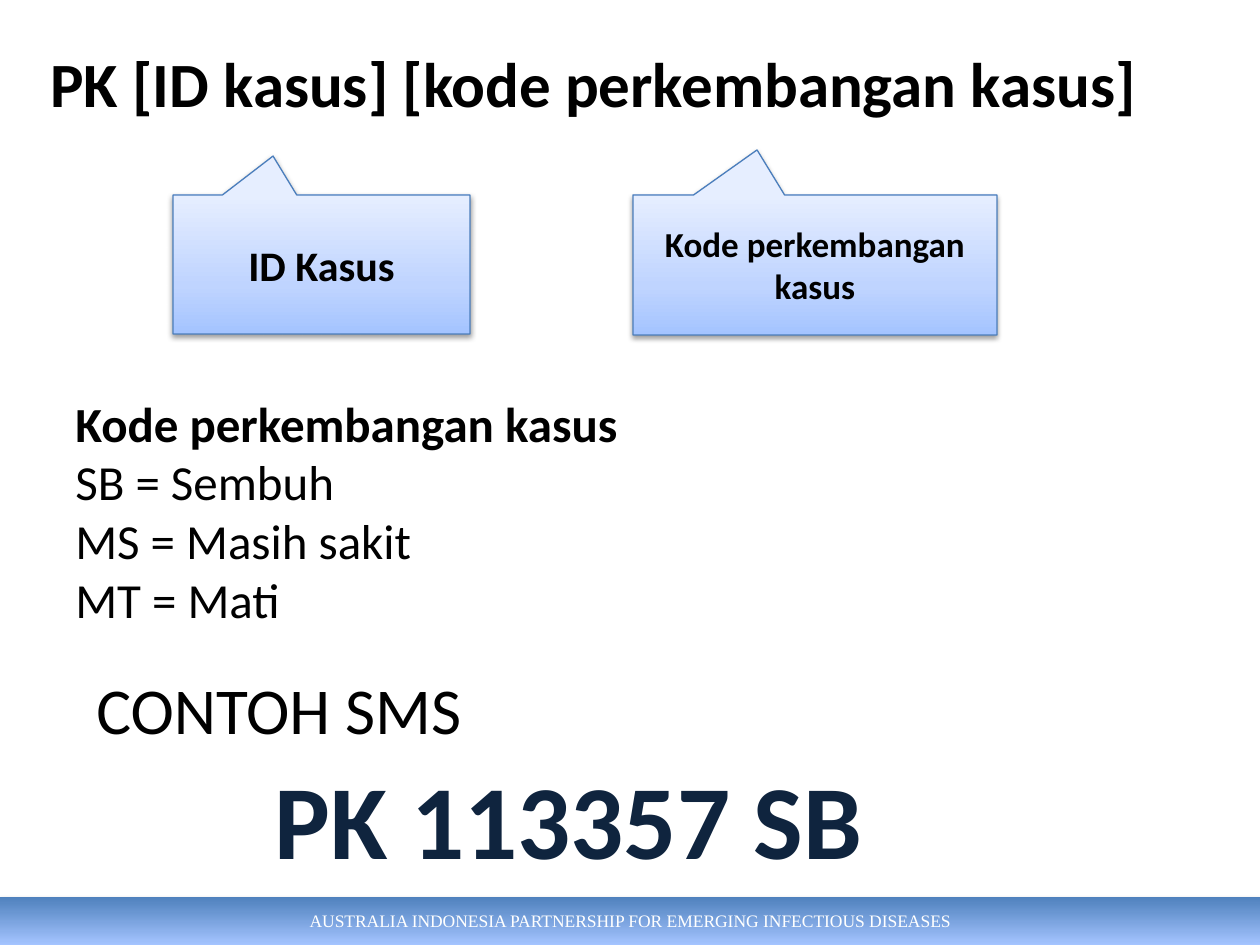
from dataclasses import dataclass

from lxml.etree import SubElement
from pptx import Presentation
from pptx.dml.color import RGBColor
from pptx.enum.shapes import MSO_SHAPE as Preset
from pptx.enum.text import MSO_ANCHOR as Anchor, PP_ALIGN as Align
from pptx.oxml.ns import qn
from pptx.util import Emu, Pt

PX = 914400 / 126
BLACK = RGBColor(0x00, 0x00, 0x00)
WHITE = RGBColor(0xFF, 0xFF, 0xFF)
NAVY = RGBColor(0x0F, 0x24, 0x3E)
BLUE = RGBColor(0x4F, 0x81, 0xBD)
OUTLINE = RGBColor(0x4B, 0x7E, 0xBC)
SKY = RGBColor(0xA4, 0xC4, 0xFF)
PALE = RGBColor(0xBF, 0xD4, 0xFF)
MIST = RGBColor(0xE6, 0xEE, 0xFF)


@dataclass(frozen=True)
class Box:
    left: int
    top: int
    width: int
    height: int

    def emu(self) -> list[Emu]:
        return [Emu(round(v * PX)) for v in (self.left, self.top, self.width, self.height)]


@dataclass(frozen=True)
class Line:
    text: str
    size: float
    bold: bool = False
    color: RGBColor = BLACK
    font: str = "Calibri"
    align: Align = Align.LEFT


@dataclass(frozen=True)
class TextBlock:
    box: Box
    lines: tuple[Line, ...]
    anchor: Anchor = Anchor.TOP


@dataclass(frozen=True)
class Callout:
    box: Box
    tip: tuple[float, float]
    line: Line


@dataclass(frozen=True)
class Gradient:
    stops: tuple[tuple[int, RGBColor], ...]
    angle: int


@dataclass(frozen=True)
class Shadow:
    opacity: int
    blur: float
    distance: float


FOOTER_GRADIENT = Gradient(((0, BLUE), (100, SKY)), 90)
CALLOUT_GRADIENT = Gradient(((0, SKY), (35, PALE), (100, MIST)), 270)
FOOTER_SHADOW = Shadow(35, 3.1, 1.8)
CALLOUT_SHADOW = Shadow(38, 3.1, 1.6)

FOOTER_BOX = Box(0, 897, 1260, 48)
FOOTER_LINE = Line("AUSTRALIA INDONESIA PARTNERSHIP FOR EMERGING INFECTIOUS DISEASES",
                   10, color=WHITE, font="Times New Roman", align=Align.CENTER)

CALLOUTS = (
    Callout(Box(173, 195, 297, 139), (-0.163, -0.78),
            Line("ID Kasus", 24, True, align=Align.CENTER)),
    Callout(Box(633, 195, 364, 140), (-0.159, -0.822),
            Line("Kode perkembangan kasus", 20, True, align=Align.CENTER)),
)

TEXT_BLOCKS = (
    TextBlock(Box(38, 38, 1191, 600),
              (Line("PK [ID kasus] [kode perkembangan kasus]", 36, True),)),
    TextBlock(Box(63, 387, 655, 289),
              (Line("Kode perkembangan kasus", 28, True),
               Line("SB = Sembuh", 28),
               Line("MS = Masih sakit", 28),
               Line("MT = Mati", 28))),
    TextBlock(Box(213, 748, 735, 110),
              (Line("PK 113357 SB ", 60, True, NAVY, align=Align.CENTER),)),
    TextBlock(Box(63, 669, 432, 78),
              (Line("CONTOH SMS", 37.4, align=Align.CENTER),), Anchor.MIDDLE),
)


def write_lines(shape, lines: tuple[Line, ...], anchor: Anchor) -> None:
    frame = shape.text_frame
    frame.word_wrap = True
    frame.vertical_anchor = anchor
    for index, line in enumerate(lines):
        paragraph = frame.add_paragraph() if index else frame.paragraphs[0]
        paragraph.alignment = line.align
        run = paragraph.add_run()
        run.text = line.text
        run.font.color.rgb = line.color
        formats = {"name": line.font, "size": Pt(line.size), "bold": line.bold}
        for name, value in formats.items():
            setattr(run.font, name, value)


def add_color(parent, color: RGBColor):
    return SubElement(parent, qn("a:srgbClr"), val=str(color))


def fill_gradient(shape, gradient: Gradient) -> None:
    shape.fill.gradient()
    element = shape._element.spPr.find(qn("a:gradFill"))
    for child in list(element):
        element.remove(child)
    stop_list = SubElement(element, qn("a:gsLst"))
    for position, color in gradient.stops:
        add_color(SubElement(stop_list, qn("a:gs"), pos=str(position * 1000)), color)
    SubElement(element, qn("a:lin"), ang=str(gradient.angle * 60000), scaled="0")


def cast_shadow(shape, shadow: Shadow) -> None:
    """Give the shape a soft black shadow straight below it."""
    shape.shadow.inherit = False
    effects = shape._element.spPr.find(qn("a:effectLst"))
    outer = SubElement(effects, qn("a:outerShdw"), blurRad=str(Pt(shadow.blur)),
                       dist=str(Pt(shadow.distance)), dir="5400000", rotWithShape="0")
    SubElement(add_color(outer, BLACK), qn("a:alpha"), val=str(shadow.opacity * 1000))


def add_panel(slide, preset: Preset, box: Box, gradient: Gradient, shadow: Shadow, line: Line):
    shape = slide.shapes.add_shape(preset, *box.emu())
    fill_gradient(shape, gradient)
    shape.line.fill.background()
    cast_shadow(shape, shadow)
    write_lines(shape, (line,), Anchor.MIDDLE)
    return shape


def add_callout(slide, callout: Callout) -> None:
    shape = add_panel(slide, Preset.RECTANGULAR_CALLOUT, callout.box,
                      CALLOUT_GRADIENT, CALLOUT_SHADOW, callout.line)
    for index, offset in enumerate(callout.tip):
        shape.adjustments[index] = offset
    shape.line.color.rgb = OUTLINE
    shape.line.width = Pt(0.75)


def add_text_block(slide, block: TextBlock) -> None:
    write_lines(slide.shapes.add_textbox(*block.box.emu()), block.lines, block.anchor)


def main() -> None:
    presentation = Presentation()
    presentation.slide_width = Emu(round(1260 * PX))
    presentation.slide_height = Emu(round(945 * PX))
    slide = presentation.slides.add_slide(presentation.slide_layouts[6])

    add_panel(slide, Preset.RECTANGLE, FOOTER_BOX, FOOTER_GRADIENT, FOOTER_SHADOW, FOOTER_LINE)
    title, *body = TEXT_BLOCKS
    add_text_block(slide, title)
    for callout in CALLOUTS:
        add_callout(slide, callout)
    for block in body:
        add_text_block(slide, block)

    presentation.save("out.pptx")


if __name__ == "__main__":
    main()
